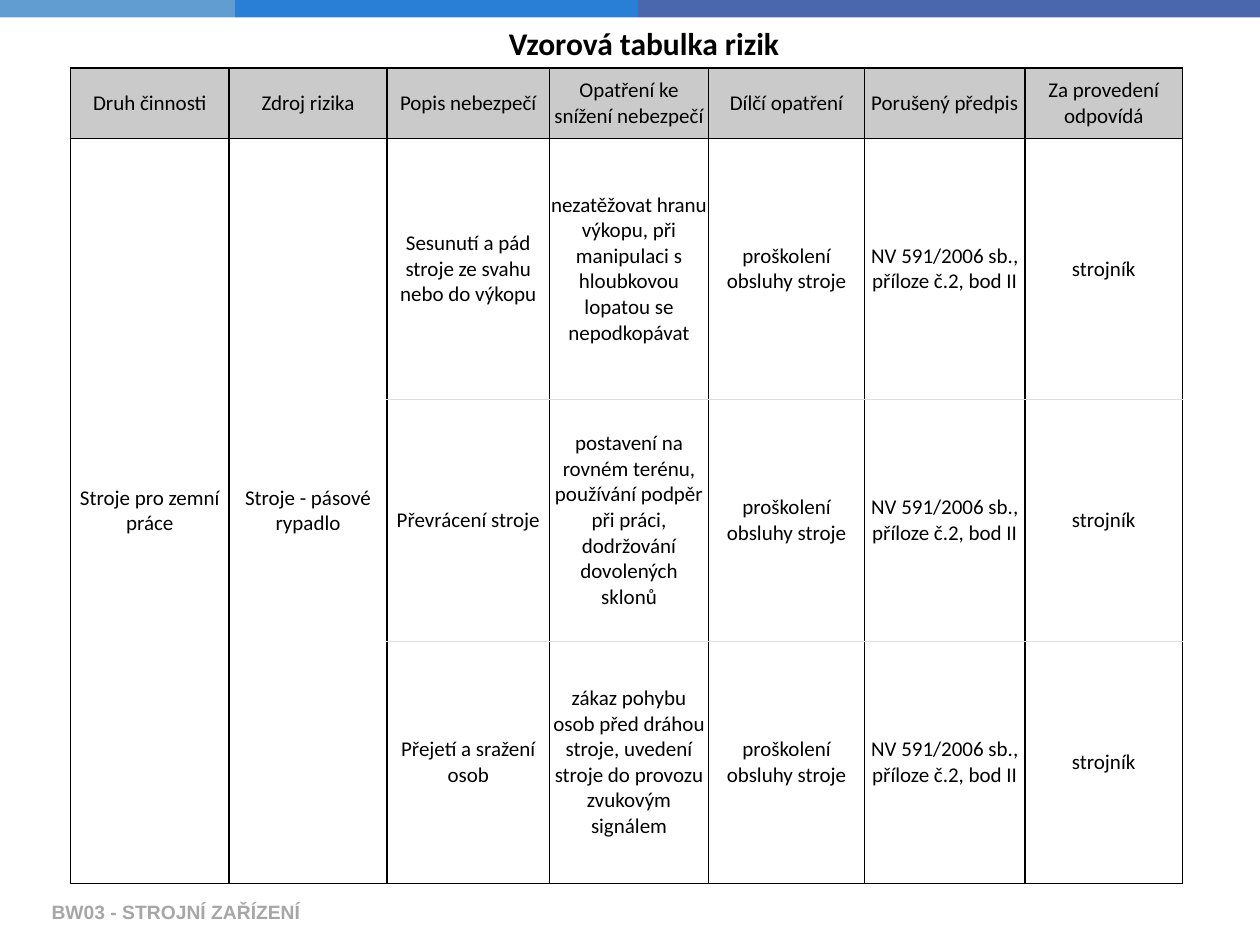
from pptx import Presentation
from pptx.dml.color import RGBColor
from pptx.enum.shapes import MSO_SHAPE
from pptx.enum.text import MSO_ANCHOR, PP_ALIGN
from pptx.oxml import parse_xml
from pptx.oxml.ns import nsdecls
from pptx.util import Cm, Pt

RECTANGLE = MSO_SHAPE.RECTANGLE
MIDDLE = MSO_ANCHOR.MIDDLE
TOP = MSO_ANCHOR.TOP
CENTER = PP_ALIGN.CENTER

BLACK = "000000"
GREY_LINE = "DDDDDD"
HEADER_FILL = "CACACA"


def color(value):
    return RGBColor.from_string(value)


def write(text_frame, text, font_name, size, text_color, bold=False):
    text_frame.text = text
    for run in text_frame.paragraphs[0].runs:
        run.font.name = font_name
        run.font.size = Pt(size)
        run.font.bold = bold
        run.font.color.rgb = color(text_color)


presentation = Presentation()
presentation.slide_width = Cm(25.4)
presentation.slide_height = Cm(19.05)
slide = presentation.slides.add_slide(presentation.slide_layouts[6])

left = 0
for width, fill in [(4.74, "629DD1"), (8.12, "297FD5"), (12.54, "4A66AC")]:
    bar = slide.shapes.add_shape(RECTANGLE, Cm(left), Cm(-0.03), Cm(width), Cm(0.38))
    bar.shadow.inherit = False
    bar.fill.solid()
    bar.fill.fore_color.rgb = color(fill)
    bar.line.fill.background()
    left += width

labels = [
    ("BW03 - STROJNÍ ZAŘÍZENÍ", 0.79, 17.88, 17.02, MIDDLE, "Arial", 11, "A6A6A6", True),
    ("Vzorová tabulka rizik", 10.01, 0.36, 6.07, TOP, "Calibri", 18, BLACK, False),
]
for text, left, top, width, anchor, font_name, size, text_color, wrap in labels:
    label = slide.shapes.add_textbox(Cm(left), Cm(top), Cm(width), Cm(1.02))
    label.text_frame.word_wrap = wrap
    label.text_frame.vertical_anchor = anchor
    write(label.text_frame, text, font_name, size, text_color, bold=True)

training = "proškolení obsluhy stroje"
regulation = "NV 591/2006 sb., příloze č.2, bod II"
operator = "strojník"
rows = [
    ["Druh činnosti", "Zdroj rizika", "Popis nebezpečí", "Opatření ke snížení nebezpečí",
     "Dílčí opatření", "Porušený předpis", "Za provedení odpovídá"],
    ["Stroje pro zemní práce", "Stroje - pásové rypadlo",
     "Sesunutí a pád stroje ze svahu nebo do výkopu",
     "nezatěžovat hranu výkopu, při manipulaci s hloubkovou lopatou se nepodkopávat",
     training, regulation, operator],
    ["", "", "Převrácení stroje",
     "postavení na rovném terénu, používání podpěr při práci, dodržování dovolených sklonů",
     training, regulation, operator],
    ["", "", "Přejetí a sražení osob",
     "zákaz pohybu osob před dráhou stroje, uvedení stroje do provozu zvukovým signálem",
     training, regulation, operator],
]
column_widths = [3.2, 3.18, 3.28, 3.2, 3.15, 3.23, 3.18]
row_heights = [1.42, 5.26, 4.88, 4.88]

table = slide.shapes.add_table(
    len(rows), len(column_widths), Cm(1.42), Cm(1.37),
    Cm(sum(column_widths)), Cm(sum(row_heights)),
).table
table.first_row = False
table.horz_banding = False
for column, width in zip(table.columns, column_widths):
    column.width = Cm(width)
for row, height in zip(table.rows, row_heights):
    row.height = Cm(height)

for row_index, texts in enumerate(rows):
    for column_index, text in enumerate(texts):
        cell = table.cell(row_index, column_index)
        cell.margin_left = cell.margin_right = Cm(0.02)
        cell.margin_top = cell.margin_bottom = Cm(0.02)
        cell.vertical_anchor = MIDDLE
        write(cell.text_frame, text, "Calibri", 12, BLACK)
        cell.text_frame.paragraphs[0].alignment = CENTER

        grey_sides = set()
        if column_index >= 2 and row_index >= 2:
            grey_sides.add("T")
        if column_index >= 2 and row_index in (1, 2):
            grey_sides.add("B")
        properties = cell._tc.get_or_add_tcPr()
        for side in "LRTB":
            line_color, points = (GREY_LINE, 0.75) if side in grey_sides else (BLACK, 1)
            properties.append(parse_xml(
                f'<a:ln{side} {nsdecls("a")} w="{Pt(points)}"><a:solidFill>'
                f'<a:srgbClr val="{line_color}"/></a:solidFill></a:ln{side}>'
            ))

        if row_index == 0:
            cell.fill.solid()
            cell.fill.fore_color.rgb = color(HEADER_FILL)
        else:
            cell.fill.background()

for column_index in range(2):
    table.cell(1, column_index).merge(table.cell(3, column_index))

presentation.save("out.pptx")
